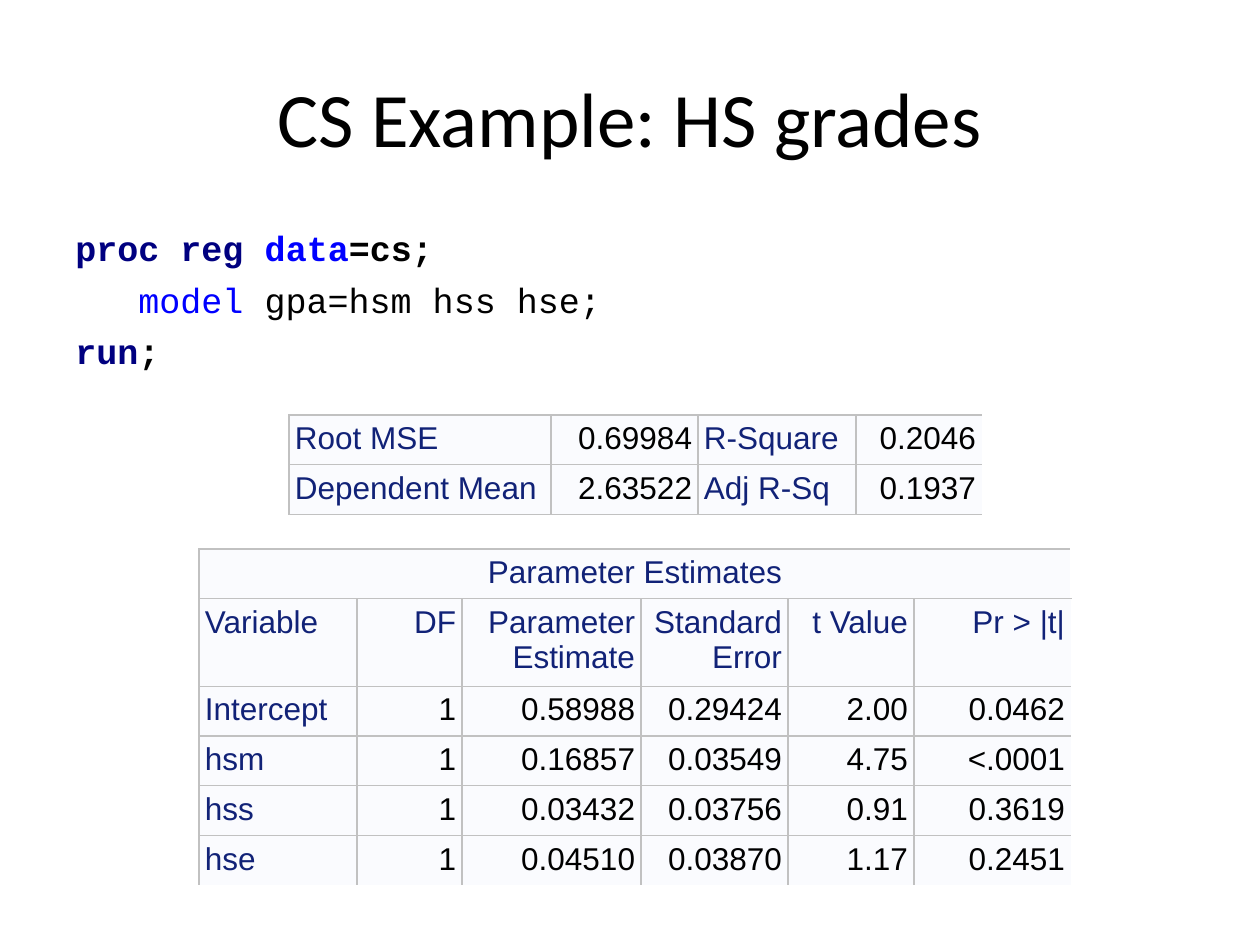
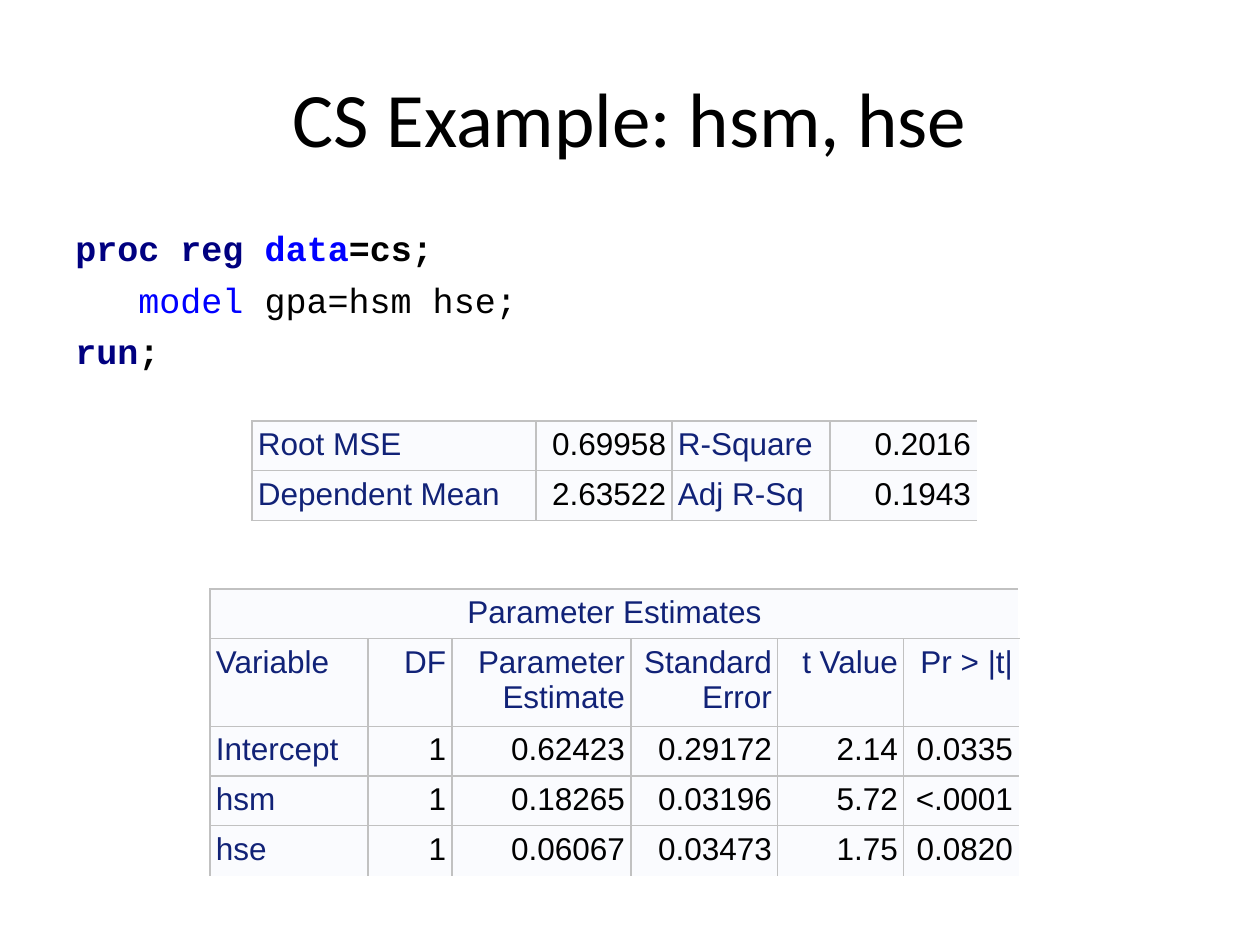
from lxml import etree
from pptx import Presentation
from pptx.dml.color import RGBColor
from pptx.enum.text import MSO_ANCHOR, PP_ALIGN
from pptx.oxml.ns import qn
from pptx.util import Emu, Pt

LEFT, CENTER, RIGHT = PP_ALIGN.LEFT, PP_ALIGN.CENTER, PP_ALIGN.RIGHT
TOP, MIDDLE = MSO_ANCHOR.TOP, MSO_ANCHOR.MIDDLE

PX_PER_INCH = 126
SLIDE_SIZE = (1260, 945)
TITLE_BOX = (63, 38, 1134, 157)
CODE_BOX = (63, 220, 1197, 160)
CODE_INDENT = 63
CELL_MARGIN = 6
ROW_HEIGHT, HEADER_HEIGHT = 48, 84
TITLE_ONLY_LAYOUT = 5

COLORS = {
    "text": "000000",
    "keyword": "000080",
    "option": "0000FF",
    "label": "112277",
    "cell": "FAFBFE",
    "border": "C1C1C1",
}

CAPTION = "Parameter Estimates"
HEADERS = ["Variable", "DF", "Parameter\nEstimate", "Standard\nError", "t Value", "Pr > |t|"]

SLIDES = [
    {
        "title": "CS Example: HS grades",
        "model": "gpa=hsm hss hse;",
        "summary": {
            "at": (289, 415),
            "widths": [262, 147, 158, 126],
            "rows": [
                ["Root MSE", "0.69984", "R-Square", "0.2046"],
                ["Dependent Mean", "2.63522", "Adj R-Sq", "0.1937"],
            ],
        },
        "estimates": {
            "at": (199, 549),
            "widths": [158, 105, 179, 147, 126, 157],
            "rows": [
                ["Intercept", "1", "0.58988", "0.29424", "2.00", "0.0462"],
                ["hsm", "1", "0.16857", "0.03549", "4.75", "<.0001"],
                ["hss", "1", "0.03432", "0.03756", "0.91", "0.3619"],
                ["hse", "1", "0.04510", "0.03870", "1.17", "0.2451"],
            ],
        },
    },
    {
        "title": "CS Example: hsm, hse",
        "model": "gpa=hsm hse;",
        "summary": {
            "at": (252, 421),
            "widths": [284, 136, 158, 147],
            "rows": [
                ["Root MSE", "0.69958", "R-Square", "0.2016"],
                ["Dependent Mean", "2.63522", "Adj R-Sq", "0.1943"],
            ],
        },
        "estimates": {
            "at": (210, 589),
            "widths": [158, 84, 179, 147, 126, 115],
            "rows": [
                ["Intercept", "1", "0.62423", "0.29172", "2.14", "0.0335"],
                ["hsm", "1", "0.18265", "0.03196", "5.72", "<.0001"],
                ["hse", "1", "0.06067", "0.03473", "1.75", "0.0820"],
            ],
        },
    },
]


def px(length):
    return Emu(round(length * 914400 / PX_PER_INCH))


def add_run(paragraph, text, font_name, size, color, bold=False):
    run = paragraph.add_run()
    run.text = text
    run.font.name = font_name
    run.font.size = Pt(size)
    run.font.bold = bold
    run.font.color.rgb = RGBColor.from_string(COLORS[color])


def add_title(slide, text):
    title = slide.shapes.title
    title.left, title.top, title.width, title.height = map(px, TITLE_BOX)
    title.text_frame.vertical_anchor = MIDDLE
    paragraph = title.text_frame.paragraphs[0]
    paragraph.alignment = CENTER
    add_run(paragraph, text, "Calibri", 44, "text")


def add_code(slide, model):
    lines = [
        (0, [("proc reg ", "keyword", True), ("data", "option", True), ("=cs;", "text", True)]),
        (CODE_INDENT, [("model ", "option", False), (model, "text", False)]),
        (0, [("run", "keyword", True), (";", "text", True)]),
    ]
    frame = slide.shapes.add_textbox(*map(px, CODE_BOX)).text_frame
    frame.word_wrap = True
    for index, (indent, parts) in enumerate(lines):
        paragraph = frame.add_paragraph() if index else frame.paragraphs[0]
        paragraph.space_before = Pt(5.6 if index else 4)
        paragraph._p.get_or_add_pPr().set("marL", str(px(indent)))
        for text, color, bold in parts:
            add_run(paragraph, text, "Courier New", 20, color, bold)


def set_borders(cell, sides):
    """Draw thin lines on the named sides (L, R, T, B) and none on the others."""
    properties = cell._tc.get_or_add_tcPr()
    for index, side in enumerate("LRTB"):
        line = etree.Element(qn(f"a:ln{side}"), w=str(Pt(0.75)))
        if side in sides:
            fill = etree.SubElement(line, qn("a:solidFill"))
            etree.SubElement(fill, qn("a:srgbClr"), val=COLORS["border"])
        else:
            etree.SubElement(line, qn("a:noFill"))
        properties.insert(index, line)


def fill_cell(cell, text, color, alignment):
    cell.vertical_anchor = TOP
    cell.margin_left = cell.margin_right = px(CELL_MARGIN)
    cell.margin_top = cell.margin_bottom = px(CELL_MARGIN)
    paragraph = cell.text_frame.paragraphs[0]
    paragraph.alignment = alignment
    for index, line in enumerate(text.split("\n")):
        if index:
            paragraph.add_line_break()
        add_run(paragraph, line, "Arial", 18, color)


def add_grid(slide, at, widths, heights, closed_bottom):
    """Add an empty table that is open on the right, and at the bottom unless closed."""
    row_count, column_count = len(heights), len(widths)
    size = (sum(widths), sum(heights))
    table = slide.shapes.add_table(row_count, column_count, *map(px, at + size)).table
    table.first_row = table.horz_banding = False
    for column, width in zip(table.columns, widths):
        column.width = px(width)
    for row, height in zip(table.rows, heights):
        row.height = px(height)
    for row_index in range(row_count):
        for column_index in range(column_count):
            cell = table.cell(row_index, column_index)
            cell.fill.solid()
            cell.fill.fore_color.rgb = RGBColor.from_string(COLORS["cell"])
            sides = "LT"
            if column_index < column_count - 1:
                sides += "R"
            if closed_bottom or row_index < row_count - 1:
                sides += "B"
            set_borders(cell, sides)
    return table


def add_summary(slide, at, widths, rows):
    table = add_grid(slide, at, widths, [ROW_HEIGHT] * len(rows), True)
    for row_index, row in enumerate(rows):
        for column_index, text in enumerate(row):
            is_label = column_index % 2 == 0
            fill_cell(table.cell(row_index, column_index), text,
                      "label" if is_label else "text", LEFT if is_label else RIGHT)


def add_estimates(slide, at, widths, rows):
    heights = [ROW_HEIGHT, HEADER_HEIGHT] + [ROW_HEIGHT] * len(rows)
    table = add_grid(slide, at, widths, heights, False)
    caption = table.cell(0, 0)
    caption.merge(table.cell(0, len(widths) - 1))
    set_caption_borders = caption._tc.tcPr.find(qn("a:lnR"))
    caption._tc.tcPr.remove(set_caption_borders)
    fill_cell(caption, CAPTION, "label", CENTER)
    for row_index, row in enumerate([HEADERS] + rows, start=1):
        for column_index, text in enumerate(row):
            is_label = row_index == 1 or column_index == 0
            fill_cell(table.cell(row_index, column_index), text,
                      "label" if is_label else "text", RIGHT if column_index else LEFT)


def main():
    presentation = Presentation()
    presentation.slide_width, presentation.slide_height = map(px, SLIDE_SIZE)
    for content in SLIDES:
        slide = presentation.slides.add_slide(presentation.slide_layouts[TITLE_ONLY_LAYOUT])
        add_title(slide, content["title"])
        add_code(slide, content["model"])
        add_summary(slide, **content["summary"])
        add_estimates(slide, **content["estimates"])
    presentation.save("out.pptx")


if __name__ == "__main__":
    main()
